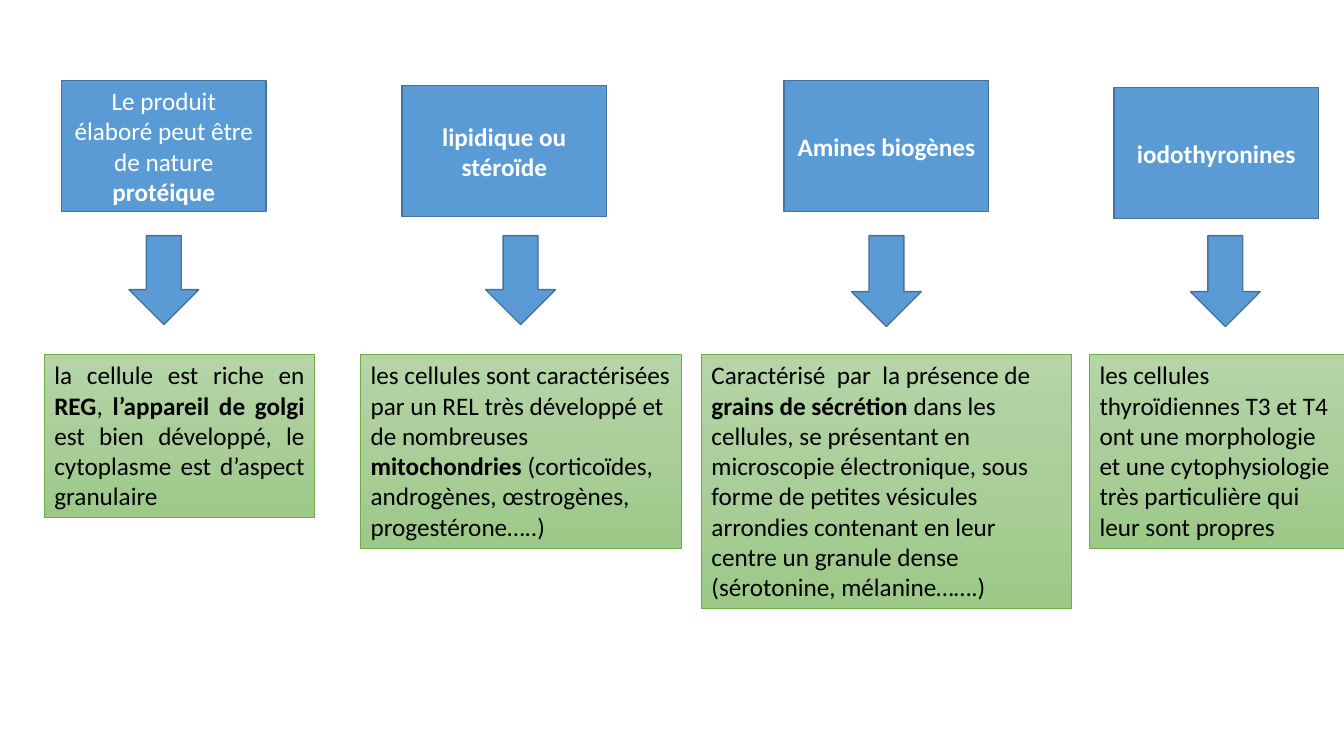
from copy import deepcopy
from dataclasses import dataclass

from pptx import Presentation
from pptx.dml.color import RGBColor
from pptx.enum.shapes import MSO_SHAPE
from pptx.enum.text import MSO_ANCHOR, MSO_AUTO_SIZE, PP_ALIGN
from pptx.oxml.ns import qn
from pptx.util import Cm, Pt

RECTANGLE, DOWN_ARROW = MSO_SHAPE.RECTANGLE, MSO_SHAPE.DOWN_ARROW
TOP, MIDDLE = MSO_ANCHOR.TOP, MSO_ANCHOR.MIDDLE
LEFT, CENTER, JUSTIFY = PP_ALIGN.LEFT, PP_ALIGN.CENTER, PP_ALIGN.JUSTIFY
GROW = MSO_AUTO_SIZE.SHAPE_TO_FIT_TEXT


@dataclass(frozen=True)
class Theme:
    font: str = "Calibri"
    size: Pt = Pt(18)
    blue: RGBColor = RGBColor(0x5B, 0x9B, 0xD5)
    blue_line: RGBColor = RGBColor(0x43, 0x73, 0x9E)
    green_line: RGBColor = RGBColor(0x70, 0xAD, 0x47)
    greens: tuple = (
        RGBColor(0xB5, 0xD5, 0xA7),
        RGBColor(0xAA, 0xCE, 0x9A),
        RGBColor(0x9C, 0xC9, 0x87),
    )
    white: RGBColor = RGBColor(0xFF, 0xFF, 0xFF)
    black: RGBColor = RGBColor(0, 0, 0)


theme = Theme()

deck = Presentation()
deck.slide_width, deck.slide_height = Cm(33.87), Cm(19.05)
page = deck.slides.add_slide(deck.slide_layouts[6])


def add_outlined(kind, left, top, width, height, line_color, line_width):
    shape = page.shapes.add_shape(kind, Cm(left), Cm(top), Cm(width), Cm(height))
    shape.shadow.inherit = False
    shape.line.color.rgb = line_color
    shape.line.width = Pt(line_width)
    return shape


def write_runs(box, runs, color, align, anchor):
    frame = box.text_frame
    frame.word_wrap = True
    frame.vertical_anchor = anchor
    para = frame.paragraphs[0]
    para.alignment = align
    for text, bold in runs:
        span = para.add_run()
        span.text = text
        span.font.name = theme.font
        span.font.size = theme.size
        span.font.bold = bold
        span.font.color.rgb = color


# Product types: left, top, runs of (text, bold)
products = [
    (1.55, 2.03, [("Le produit élaboré peut être de nature ", False),
                  ("protéique", True)]),
    (10.13, 2.16, [("lipidique ou stéroïde", True)]),
    (19.76, 2.03, [("Amines biogènes", True)]),
    (28.07, 2.21, [("iodothyronines", True)]),
]
for left, top, runs in products:
    box = add_outlined(RECTANGLE, left, top, 5.16, 3.3, theme.blue_line, 1)
    box.fill.solid()
    box.fill.fore_color.rgb = theme.blue
    write_runs(box, runs, theme.white, CENTER, MIDDLE)

# Cell descriptions: left, width, height, alignment, runs
cells = [
    (1.12, 6.81, 4.11, JUSTIFY, [
        ("la cellule est riche en ", False),
        ("REG", True),
        (", ", False),
        ("l’appareil de golgi ", True),
        ("est bien développé, le cytoplasme est d’aspect granulaire", False),
    ]),
    (9.09, 8.08, 4.88, LEFT, [
        ("les cellules sont caractérisées par un REL très développé "
         "et de nombreuses ", False),
        ("mitochondries", True),
        (" (corticoïdes, androgènes, œstrogènes, progestérone…..)", False),
    ]),
    (17.68, 9.32, 6.4, LEFT, [
        ("Caractérisé  par  la présence de ", False),
        ("grains de sécrétion ", True),
        ("dans les cellules, se présentant en microscopie électronique, "
         "sous forme de petites vésicules arrondies contenant en leur centre "
         "un granule dense (sérotonine, mélanine…….)", False),
    ]),
    (27.46, 6.43, 4.88, LEFT, [
        ("les cellules thyroïdiennes T3 et T4 ont une morphologie et une "
         "cytophysiologie très particulière qui leur sont propres", False),
    ]),
]
for left, width, height, align, runs in cells:
    box = add_outlined(RECTANGLE, left, 8.94, width, height, theme.green_line, 0.5)
    box.fill.gradient()
    box.fill.gradient_angle = 270
    # The default gradient has two stops; add one for the middle
    first_stop = box._element.spPr.find(".//" + qn("a:gs"))
    first_stop.addnext(deepcopy(first_stop))
    for index, (stop, green) in enumerate(zip(box.fill.gradient_stops, theme.greens)):
        stop.position = index / 2
        stop.color.rgb = green
    write_runs(box, runs, theme.black, align, TOP)
    box.text_frame.auto_size = GROW

# Arrows from product to cell: left, height
for left, height in [(3.25, 2.24), (12.24, 2.24), (21.46, 2.29), (30, 2.29)]:
    arrow = add_outlined(DOWN_ARROW, left, 5.94, 1.76, height, theme.blue_line, 1)
    arrow.fill.solid()
    arrow.fill.fore_color.rgb = theme.blue

deck.save("out.pptx")
